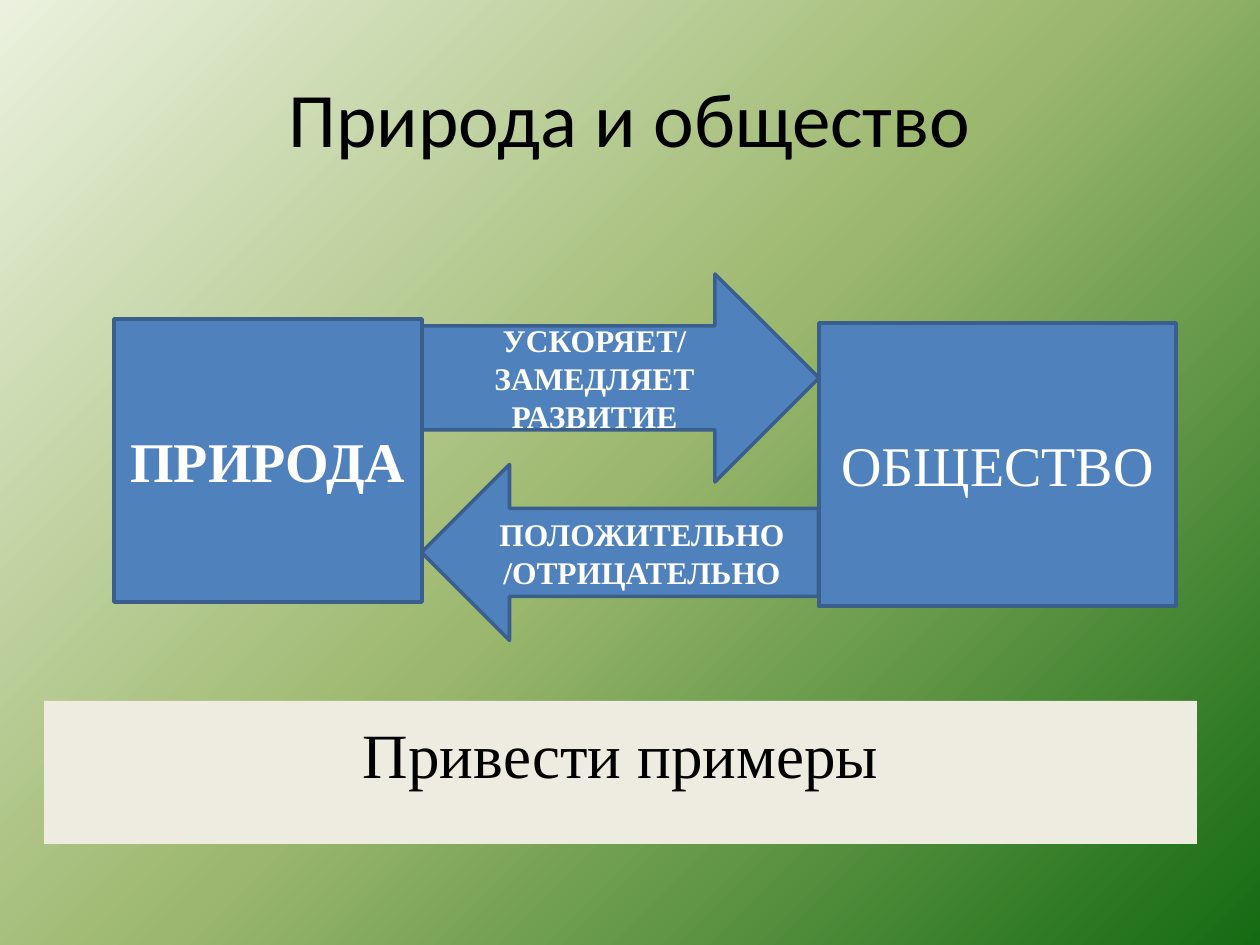
"""Build the slide on how nature and society act on each other."""
from copy import deepcopy
from dataclasses import dataclass

from pptx import Presentation
from pptx.dml.color import RGBColor
from pptx.enum.shapes import MSO_SHAPE as Shp
from pptx.enum.text import MSO_ANCHOR as Anchor, PP_ALIGN as Align
from pptx.oxml.ns import qn
from pptx.util import Emu, Pt

BLACK = RGBColor(0x00, 0x00, 0x00)
WHITE = RGBColor(0xFF, 0xFF, 0xFF)
BLUE = RGBColor(0x4F, 0x81, 0xBD)
DARK_BLUE = RGBColor(0x3A, 0x5F, 0x8C)
CREAM = RGBColor(0xEE, 0xEC, 0xE1)
GRADIENT = (
    (0.0, RGBColor(0xEB, 0xF1, 0xDE)),
    (0.5, RGBColor(0x9C, 0xB8, 0x6E)),
    (1.0, RGBColor(0x15, 0x6B, 0x13)),
)
SERIF = "Times New Roman"


@dataclass(frozen=True)
class Block:
    kind: Shp
    box: tuple[int, int, int, int]
    lines: tuple[str, ...]
    size: int
    bold: bool = True
    rotation: int = 0
    vert: str = "horz"


BLOCKS = (
    Block(Shp.RECTANGLE, (114, 319, 308, 283), ("ПРИРОДА",), 32),
    Block(Shp.RECTANGLE, (819, 323, 357, 283), ("ОБЩЕСТВО",), 32, bold=False),
    Block(Shp.RIGHT_ARROW, (422, 274, 397, 208),
          ("УСКОРЯЕТ/", "ЗАМЕДЛЯЕТ РАЗВИТИЕ"), 18),
    Block(Shp.DOWN_ARROW, (532, 354, 176, 397),
          ("ПОЛОЖИТЕЛЬНО", "/ОТРИЦАТЕЛЬНО"), 18, rotation=90, vert="vert270"),
)


def px(n: int) -> Emu:
    return Emu(round(n * 914400 / 126))


def write(sp, *lines: str, size: int, color: RGBColor, font: str = SERIF,
          bold: bool = False, anchor: Anchor = Anchor.MIDDLE) -> None:
    tf = sp.text_frame
    tf.word_wrap = True
    tf.vertical_anchor = anchor
    tf.text = "\n".join(lines)
    for p in tf.paragraphs:
        p.alignment = Align.CENTER
        for r in p.runs:
            f = r.font
            f.name, f.size, f.bold = font, Pt(size), bold
            f.color.rgb = color


def paint_background(s) -> None:
    fill = s.background.fill
    fill.gradient()
    fill.gradient_angle = 315
    stops = s.element.find(".//" + qn("a:gsLst"))
    stops.insert(1, deepcopy(stops[0]))
    for stop, (position, color) in zip(fill.gradient_stops, GRADIENT):
        stop.position = position
        stop.color.rgb = color


def add_block(s, block: Block) -> None:
    sp = s.shapes.add_shape(block.kind, *map(px, block.box))
    sp.shadow.inherit = False
    sp.rotation = block.rotation
    sp.fill.solid()
    sp.fill.fore_color.rgb = BLUE
    sp.line.color.rgb = DARK_BLUE
    sp.line.width = Pt(2)
    write(sp, *block.lines, size=block.size, color=WHITE, bold=block.bold)
    sp.text_frame._txBody.bodyPr.set("vert", block.vert)


def add_task(s) -> None:
    sp = s.shapes.add_textbox(*map(px, (44, 701, 1153, 143)))
    sp.fill.solid()
    sp.fill.fore_color.rgb = CREAM
    write(sp, "Привести примеры", size=36, color=BLACK, anchor=Anchor.TOP)
    sp.text_frame.margin_top = px(15)


def main() -> None:
    prs = Presentation()
    prs.slide_width, prs.slide_height = px(1260), px(945)
    s = prs.slides.add_slide(prs.slide_layouts[6])
    paint_background(s)
    title = s.shapes.add_textbox(*map(px, (63, 38, 1134, 157)))
    write(title, "Природа и общество", size=44, color=BLACK, font="Calibri")
    add_task(s)
    for block in BLOCKS:
        add_block(s, block)
    prs.save("out.pptx")


if __name__ == "__main__":
    main()
